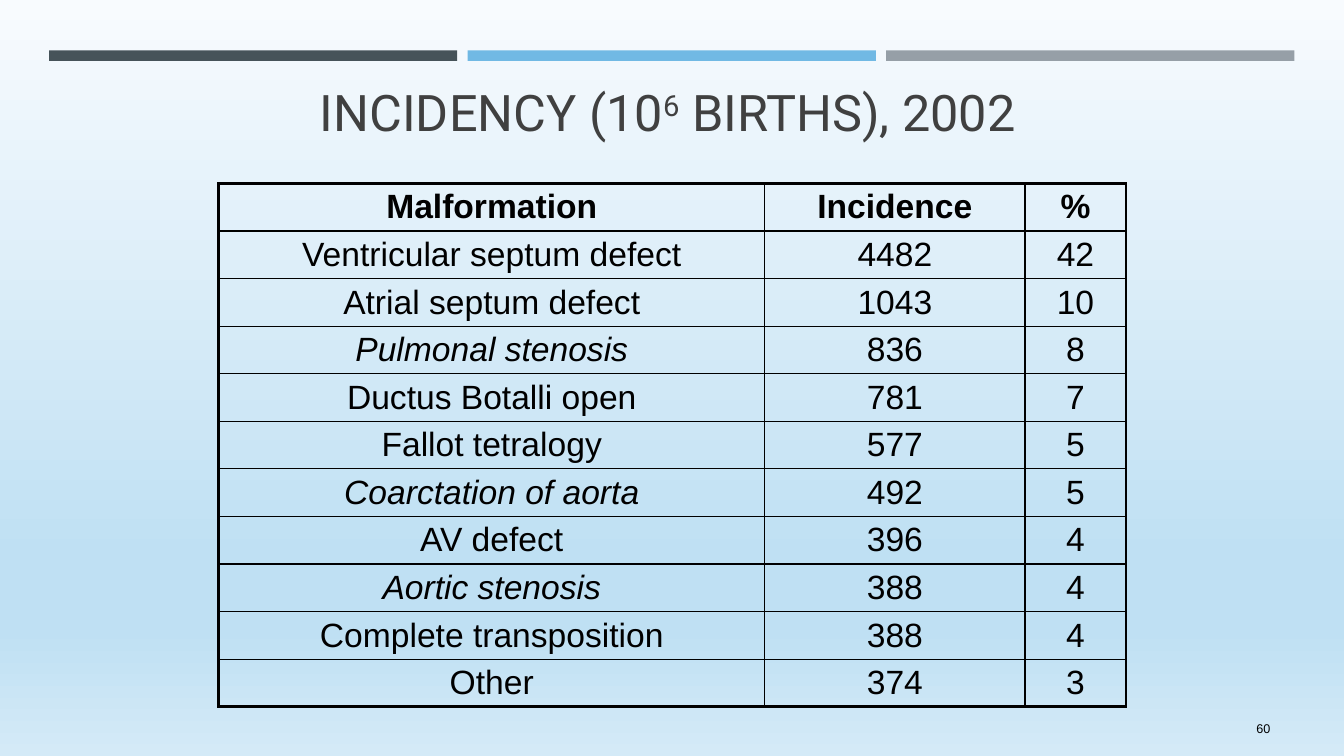
from lxml import etree
from pptx import Presentation
from pptx.dml.color import RGBColor
from pptx.enum.shapes import MSO_SHAPE as Shape
from pptx.enum.text import MSO_ANCHOR as Anchor, MSO_AUTO_SIZE as AutoSize, PP_ALIGN as Align
from pptx.oxml.ns import qn
from pptx.util import Pt

BLACK = RGBColor(0x00, 0x00, 0x00)
TITLE_GREY = RGBColor(0x40, 0x40, 0x40)
SLATE = RGBColor(0x46, 0x53, 0x59)
SKY = RGBColor(0x71, 0xB9, 0xE4)
GREY = RGBColor(0x96, 0x9F, 0xA7)
PALE = RGBColor(0xF8, 0xFB, 0xFE)
LIGHT_BLUE = RGBColor(0xBF, 0xE0, 0xF3)
SOFT_BLUE = RGBColor(0xD4, 0xEA, 0xF7)

BACKGROUND_STOPS = [(0, PALE), (74, LIGHT_BLUE), (83, LIGHT_BLUE), (100, SOFT_BLUE)]
THIN, THICK = 1, 2.25
COLUMN_WIDTHS = [390, 186, 72]
ROW_HEIGHT = 34
ROWS = [
    ("Malformation", "Incidence", "%"),
    ("Ventricular septum defect", "4482", "42"),
    ("Atrial septum defect", "1043", "10"),
    ("Pulmonal stenosis", "836", "8"),
    ("Ductus Botalli open", "781", "7"),
    ("Fallot tetralogy", "577", "5"),
    ("Coarctation of aorta", "492", "5"),
    ("AV defect", "396", "4"),
    ("Aortic stenosis", "388", "4"),
    ("Complete transposition", "388", "4"),
    ("Other", "374", "3"),
]
ITALIC_NAMES = {"Pulmonal stenosis", "Coarctation of aorta", "Aortic stenosis"}


def add_text(paragraph, text, *, size, font="Arial", color=BLACK, align=Align.CENTER,
             bold=False, italic=False, baseline=None):
    paragraph.alignment = align
    run = paragraph.add_run()
    run.text = text
    run.font.name = font
    run.font.size = Pt(size)
    run.font.color.rgb = color
    run.font.bold = bold
    run.font.italic = italic
    if baseline:
        run._r.get_or_add_rPr().set("baseline", str(baseline * 1000))


def set_background(slide):
    fill = slide.background.fill
    fill.gradient()
    fill.gradient_angle = 270
    stop_list = slide.element.find(".//" + qn("a:gsLst"))
    for stop in list(stop_list):
        stop_list.remove(stop)
    for position, color in BACKGROUND_STOPS:
        stop = etree.SubElement(stop_list, qn("a:gs"), pos=str(position * 1000))
        etree.SubElement(stop, qn("a:srgbClr"), val=str(color))


def add_bar(slide, left, color):
    bar = slide.shapes.add_shape(Shape.RECTANGLE, Pt(left), Pt(36), Pt(291.6), Pt(7.5))
    bar.shadow.inherit = False
    bar.fill.solid()
    bar.fill.fore_color.rgb = color
    bar.line.fill.background()


def add_title(slide):
    title = slide.shapes.title
    title.left, title.top, title.width, title.height = Pt(156), Pt(60), Pt(642), Pt(44.5)
    frame = title.text_frame
    frame.auto_size = AutoSize.NONE
    frame.vertical_anchor = Anchor.BOTTOM
    for text, baseline in [("INCIDENCY (10", None), ("6", 30), (" BIRTHS), 2002", None)]:
        add_text(frame.paragraphs[0], text, size=36, font="Roboto", color=TITLE_GREY,
                 baseline=baseline)


def set_borders(cell, widths):
    properties = cell._tc.get_or_add_tcPr()
    for index, (side, width) in enumerate(widths.items()):
        line = etree.Element(qn("a:ln" + side), w=str(Pt(width)))
        fill = etree.SubElement(line, qn("a:solidFill"))
        etree.SubElement(fill, qn("a:srgbClr"), val=str(BLACK))
        properties.insert(index, line)


def add_incidence_table(slide):
    last_row, last_column = len(ROWS) - 1, len(COLUMN_WIDTHS) - 1
    table = slide.shapes.add_table(
        len(ROWS), len(COLUMN_WIDTHS), Pt(156.25), Pt(131),
        Pt(sum(COLUMN_WIDTHS)), Pt(ROW_HEIGHT * len(ROWS))).table
    table.first_row = table.horz_banding = False
    for column, width in zip(table.columns, COLUMN_WIDTHS):
        column.width = Pt(width)
    for r, values in enumerate(ROWS):
        table.rows[r].height = Pt(ROW_HEIGHT)
        for c, value in enumerate(values):
            cell = table.cell(r, c)
            cell.fill.background()
            cell.vertical_anchor = Anchor.MIDDLE
            cell.margin_top = cell.margin_bottom = Pt(3)
            add_text(cell.text_frame.paragraphs[0], value, size=24,
                     bold=r == 0, italic=value in ITALIC_NAMES)
            # Thick lines on the outside, thin ones within
            set_borders(cell, {
                "L": THICK if c == 0 else THIN,
                "R": THICK if c == last_column else THIN,
                "T": THICK if r == 0 else THIN,
                "B": THICK if r == last_row else THIN,
            })


def add_slide_number(slide):
    box = slide.shapes.add_textbox(Pt(831.6), Pt(506), Pt(83), Pt(29))
    frame = box.text_frame
    frame.word_wrap = True
    frame.vertical_anchor = Anchor.MIDDLE
    add_text(frame.paragraphs[0], "60", size=9, align=Align.RIGHT)


def main():
    presentation = Presentation()
    presentation.slide_width, presentation.slide_height = Pt(960), Pt(540)
    slide = presentation.slides.add_slide(presentation.slide_layouts[5])
    set_background(slide)

    # Three bars across the top
    for index, color in enumerate([SLATE, SKY, GREY]):
        add_bar(slide, 35 + index * 299, color)

    add_title(slide)
    add_incidence_table(slide)
    add_slide_number(slide)
    presentation.save("out.pptx")


if __name__ == "__main__":
    main()
